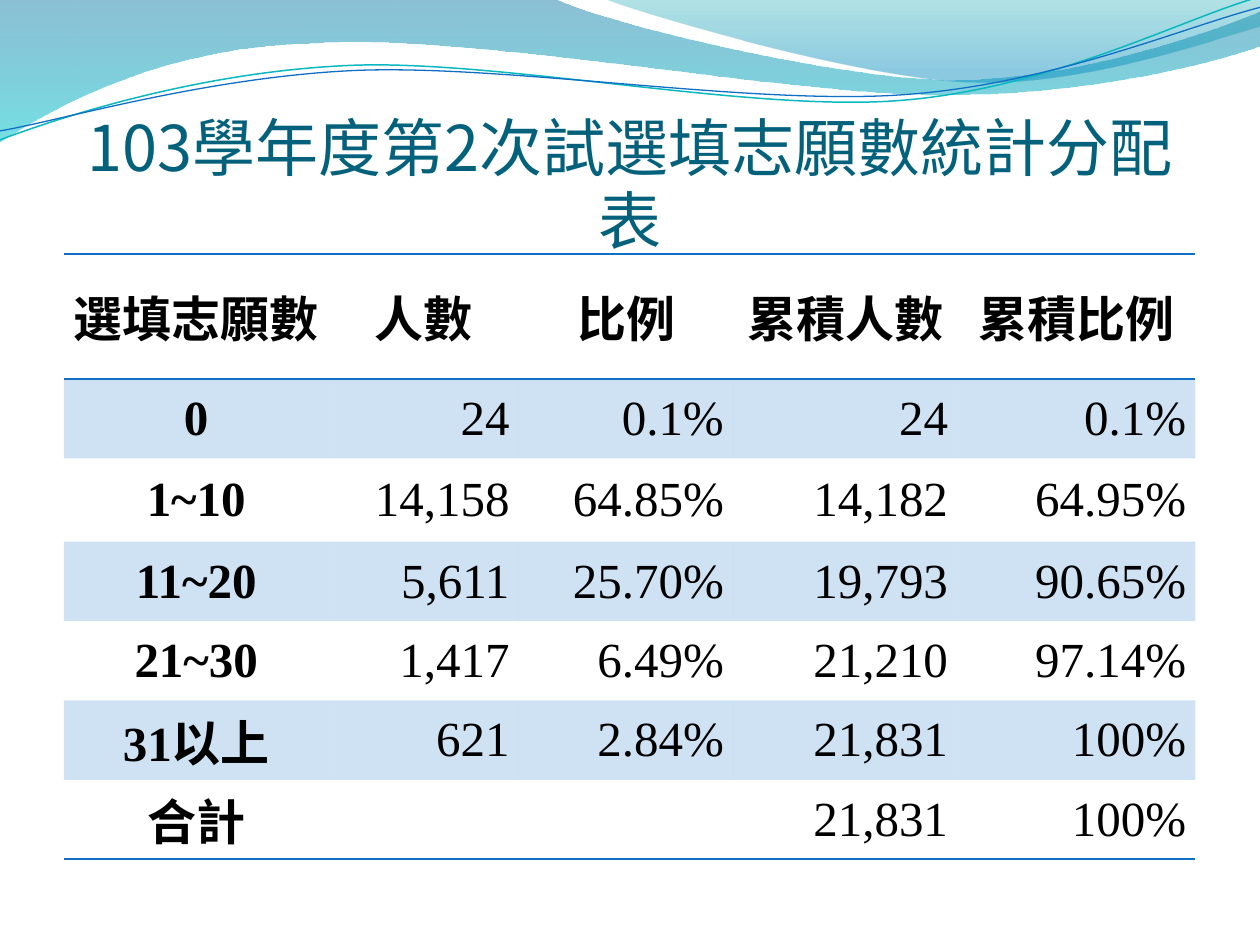
from lxml.etree import SubElement
from pptx import Presentation
from pptx.dml.color import RGBColor
from pptx.enum.text import MSO_ANCHOR, PP_ALIGN
from pptx.oxml.ns import qn
from pptx.util import Cm, Pt

COLORS = {"title": "04617B", "text": "000000", "accent": "0F6FC6", "teal": "0AB8BF",
          "deep": "0074A1", "aqua": "00C6CF", "sea": "00A1A9", "sky": "008BBF"}
CJK, SERIF = "Noto Sans CJK SC", "Times New Roman"
TITLE = "103學年度第2次試選填志願數統計分配表"
ROWS = [
    ("選填志願數", "人數", "比例", "累積人數", "累積比例"),
    ("0", "24", "0.1%", "24", "0.1%"),
    ("1~10", "14,158", "64.85%", "14,182", "64.95%"),
    ("11~20", "5,611", "25.70%", "19,793", "90.65%"),
    ("21~30", "1,417", "6.49%", "21,210", "97.14%"),
    ("31以上", "621", "2.84%", "21,831", "100%"),
    ("合計", "", "", "21,831", "100%"),
]
COLUMN_WIDTHS = [5.33, 3.84, 4.32, 4.52, 4.8]
ROW_HEIGHTS = [2.52, 1.6, 1.68, 1.6, 1.6, 1.6, 1.6]

BANDS = [
    {"path": [(0, 0), (11.18, -0.03), (12.09, 0.43, 16.87, 1.6, 19.25, 1.6),
              (21.67, 1.6, 24.33, 0.66, 25.4, 0.23), (25.43, 0.91),
              (24.97, 1.12, 22.1, 1.93, 18.95, 1.91), (15.8, 1.91, 9.7, 0.71, 6.53, 0.86),
              (3.28, 0.91, 1.17, 2.11, -0.03, 2.87)],
     "stops": [(0, "deep", 45), (1, "aqua", 55)]},
    {"path": [(12.17, -0.03), (12.93, 0.28, 17.32, 1.57, 19.53, 1.65),
              (21.74, 1.75, 24.41, 0.81, 25.4, 0.53), (25.4, 0)],
     "stops": [(0, "sea", 30), (0.8, "sky", 45)]},
]
LINES = [
    {"path": [(0, 2.82), (1.22, 2.36, 4.01, 1.45, 7.04, 1.32),
              (10.03, 1.19, 15.06, 2.26, 18.11, 2.03), (21.16, 1.8, 23.83, 0.38, 25.35, -0.05)],
     "color": "teal", "width": 0.85},
    {"path": [(0, 2.64), (1.19, 2.44, 4.17, 1.55, 7.19, 1.42),
              (10.24, 1.3, 15.16, 2.13, 18.21, 1.91), (21.23, 1.7, 23.9, 0.53, 25.4, 0.15)],
     "color": "accent", "width": 0.75},
]


def rgb(name):
    return RGBColor.from_string(COLORS[name])


def set_alpha(color_element, percent):
    SubElement(color_element, qn("a:alpha"), val=str(percent * 1000))


def bend(shape, parts):
    segments = iter(list(shape.element.iter(qn("a:lnTo"))))
    for part in parts:
        first = next(segments)
        if len(part) == 6:
            curve = first.makeelement(qn("a:cubicBezTo"))
            first.addprevious(curve)
            for segment in (first, next(segments), next(segments)):
                curve.append(segment[0])
                segment.getparent().remove(segment)


def add_wave(page, path, closed):
    start, *points = [(Cm(part[i]), Cm(part[i + 1]))
                      for part in path for i in range(0, len(part), 2)]
    builder = page.shapes.build_freeform(*start)
    builder.add_line_segments(points, close=closed)
    shape = builder.convert_to_shape()
    shape.shadow.inherit = False
    bend(shape, path[1:])
    return shape


def add_band(page, path, stops):
    shape = add_wave(page, path, True)
    shape.line.fill.background()
    shape.fill.gradient()
    shape.fill.gradient_angle = 270
    for stop, (position, color, _) in zip(shape.fill.gradient_stops, stops):
        stop.position, stop.color.rgb = position, rgb(color)
    for element, (_, _, alpha) in zip(shape.element.spPr.iter(qn("a:srgbClr")), stops):
        set_alpha(element, alpha)


def add_line(page, path, color, width):
    shape = add_wave(page, path, False)
    shape.fill.background()
    shape.line.color.rgb = rgb(color)
    shape.line.width = Pt(width)


def write(paragraph, text, align, latin, size, color, bold=False):
    paragraph.alignment = align
    span = paragraph.add_run()
    span.text = text
    for name, value in {"name": latin, "size": Pt(size), "bold": bold}.items():
        setattr(span.font, name, value)
    span.font.color.rgb = rgb(color)
    SubElement(span.font._element, qn("a:ea"), typeface=CJK)


def add_title(page):
    box = page.shapes.add_textbox(Cm(1.27), Cm(1.96), Cm(22.86), Cm(3.18))
    frame = box.text_frame
    layout = {"word_wrap": True, "vertical_anchor": MSO_ANCHOR.TOP, "margin_left": 0,
              "margin_right": 0, "margin_top": Cm(0.28), "margin_bottom": 0}
    for name, value in layout.items():
        setattr(frame, name, value)
    frame.paragraphs[0].line_spacing = Pt(41.7)
    write(frame.paragraphs[0], TITLE, PP_ALIGN.CENTER, CJK, 36, "title")


def add_border(cell, side):
    line = SubElement(cell._tc.get_or_add_tcPr(), qn(f"a:{side}"), w=str(Pt(1)))
    fill = SubElement(line, qn("a:solidFill"))
    SubElement(fill, qn("a:srgbClr"), val=COLORS["accent"])


def fill_cell(cell, text, row, column):
    layout = {"vertical_anchor": MSO_ANCHOR.MIDDLE, "margin_left": Cm(0.19),
              "margin_right": Cm(0.19), "margin_top": 0, "margin_bottom": 0}
    for name, value in layout.items():
        setattr(cell, name, value)
    heading = row == 0 or column == 0
    if text:
        write(cell.text_frame.paragraphs[0], text,
              PP_ALIGN.CENTER if heading else PP_ALIGN.RIGHT,
              SERIF if row else CJK, 28, "text", heading)
    if row == 0:
        add_border(cell, "lnT")
    if row in (0, len(ROWS) - 1):
        add_border(cell, "lnB")
    if row % 2:
        cell.fill.solid()
        cell.fill.fore_color.rgb = rgb("accent")
        set_alpha(cell._tc.tcPr.find(qn("a:solidFill"))[0], 20)
    else:
        cell.fill.background()


def add_statistics(page):
    table = page.shapes.add_table(len(ROWS), len(COLUMN_WIDTHS), Cm(1.29), Cm(5.12),
                                  Cm(sum(COLUMN_WIDTHS)), Cm(sum(ROW_HEIGHTS))).table
    table.first_row = table.horz_banding = False
    style = table._tbl.tblPr.find(qn("a:tableStyleId"))
    style.text = "{2D5ABB26-0587-4C30-8999-92F81FD0307C}"
    for column, width in zip(table.columns, COLUMN_WIDTHS):
        column.width = Cm(width)
    for row, height in zip(table.rows, ROW_HEIGHTS):
        row.height = Cm(height)
    for row, texts in enumerate(ROWS):
        for column, text in enumerate(texts):
            fill_cell(table.cell(row, column), text, row, column)


def main():
    deck = Presentation()
    deck.slide_width, deck.slide_height = Cm(25.4), Cm(19.05)
    page = deck.slides.add_slide(deck.slide_layouts[6])
    for band in BANDS:
        add_band(page, **band)
    for line in LINES:
        add_line(page, **line)
    add_title(page)
    add_statistics(page)
    deck.save("out.pptx")


if __name__ == "__main__":
    main()
